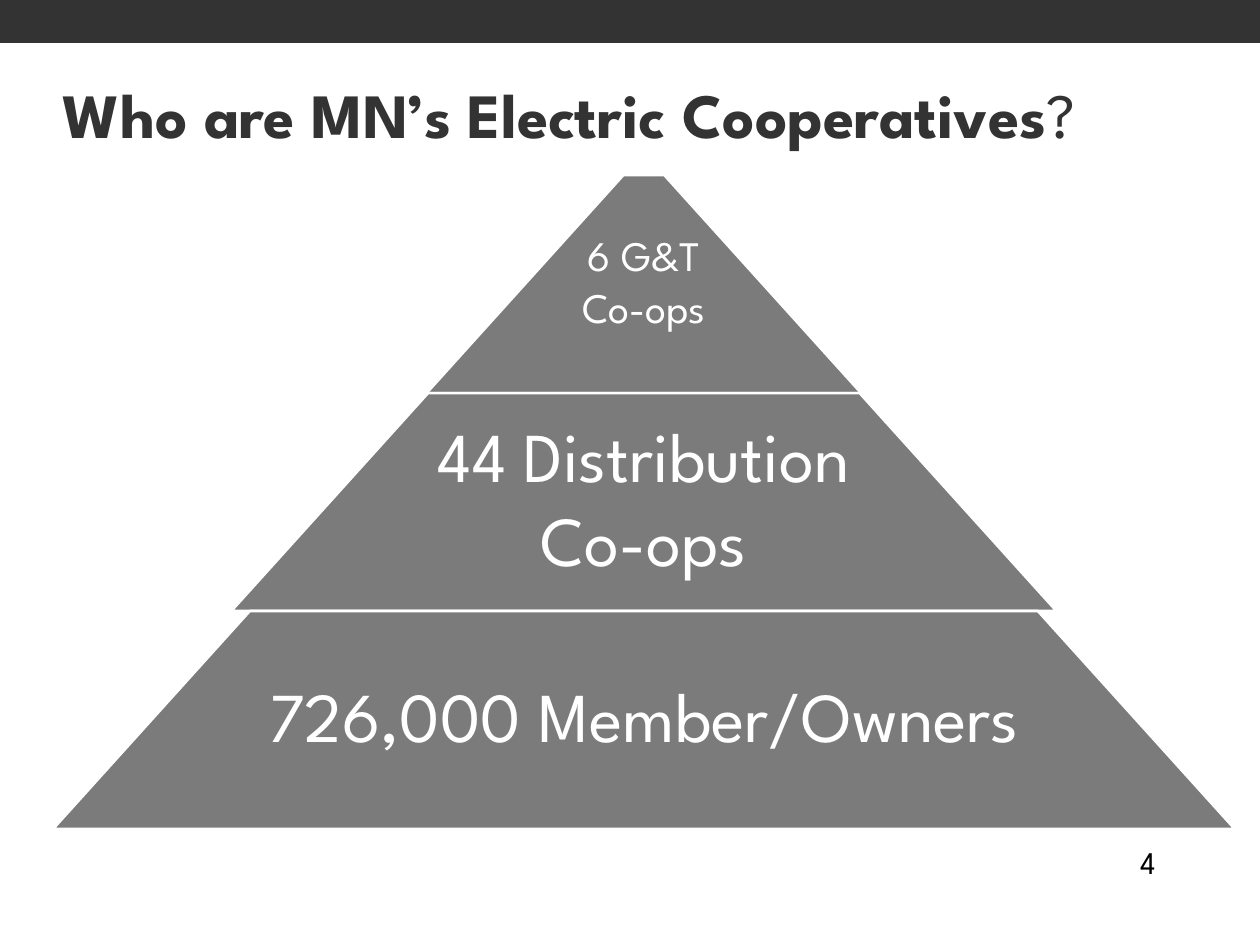
from dataclasses import dataclass

from pptx import Presentation
from pptx.dml.color import RGBColor
from pptx.enum.shapes import MSO_SHAPE as Shape
from pptx.enum.text import MSO_ANCHOR as Anchor, PP_ALIGN as Align
from pptx.util import Inches, Pt

FONT = "League Spartan"
DARK, GREY, WHITE, BLACK = "333333", "7B7B7B", "FFFFFF", "000000"
CENTRE, TOP, TIER_HEIGHT, SLOPE = 5.11, 1.39, 1.73, 0.903


@dataclass
class Tier:
    lines: list[str]
    width: float
    text_width: float
    size: int
    inset: float
    space_after: float


TIERS = [
    Tier(["6 G&T", "Co-ops"], 3.45, 3.45, 24, 0.03, 4.1),
    Tier(["44 Distribution", "Co-ops"], 6.55, 4.26, 40, 0.06, 4.8),
    Tier(["726,000 Member/Owners"], 9.38, 6.1, 40, 0.06, 0),
]


def rgb(value: str) -> RGBColor:
    return RGBColor.from_string(value)


def add_filled(slide, preset, left: float, top: float, width: float, height: float, fill: str):
    shape = slide.shapes.add_shape(
        preset, Inches(left), Inches(top), Inches(width), Inches(height))
    shape.shadow.inherit = False
    shape.fill.solid()
    shape.fill.fore_color.rgb = rgb(fill)
    shape.line.fill.background()
    return shape


def add_text(slide, lines: list[str], left: float, top: float, width: float, height: float,
             size: int, color: str, anchor=Anchor.MIDDLE):
    box = slide.shapes.add_textbox(Inches(left), Inches(top), Inches(width), Inches(height))
    frame = box.text_frame
    frame.word_wrap = True
    frame.vertical_anchor = anchor
    frame.text = "\n".join(lines)
    for paragraph in frame.paragraphs:
        for run in paragraph.runs:
            run.font.name = FONT
            run.font.size = Pt(size)
            run.font.color.rgb = rgb(color)
    return frame


def add_tier(slide, tier: Tier, top: float) -> None:
    trapezoid = add_filled(slide, Shape.TRAPEZOID, CENTRE - tier.width / 2, top,
                           tier.width, TIER_HEIGHT, GREY)
    trapezoid.adjustments[0] = SLOPE
    trapezoid.line.color.rgb = rgb(WHITE)
    trapezoid.line.width = Pt(1.5)

    label = add_text(slide, tier.lines, CENTRE - tier.text_width / 2, top,
                     tier.text_width, TIER_HEIGHT, tier.size, WHITE)
    label.margin_left = label.margin_right = Inches(tier.inset)
    label.margin_top = label.margin_bottom = Inches(tier.inset)
    for paragraph in label.paragraphs:
        paragraph.alignment = Align.CENTER
        paragraph.line_spacing = 0.9
        paragraph.space_after = Pt(tier.space_after)


def main() -> None:
    deck = Presentation()
    deck.slide_width, deck.slide_height = Inches(10), Inches(7.5)
    slide = deck.slides.add_slide(deck.slide_layouts[6])

    add_filled(slide, Shape.RECTANGLE, 0, 0, 10, 0.34, DARK)
    add_text(slide, ["4"], 8.95, 6.64, 0.83, 0.4, 18, BLACK, Anchor.TOP)

    title = add_text(slide, ["Who are MN’s Electric Cooperatives"],
                     0.4, 0.45, 9.38, 0.89, 36, DARK).paragraphs[0]
    title.runs[0].font.bold = True
    question_mark = title.add_run()
    question_mark.text = "?"
    question_mark.font.name = FONT
    question_mark.font.size = Pt(36)
    question_mark.font.color.rgb = rgb(DARK)

    for row, tier in enumerate(TIERS):
        add_tier(slide, tier, TOP + row * TIER_HEIGHT)

    deck.save("out.pptx")


if __name__ == "__main__":
    main()
